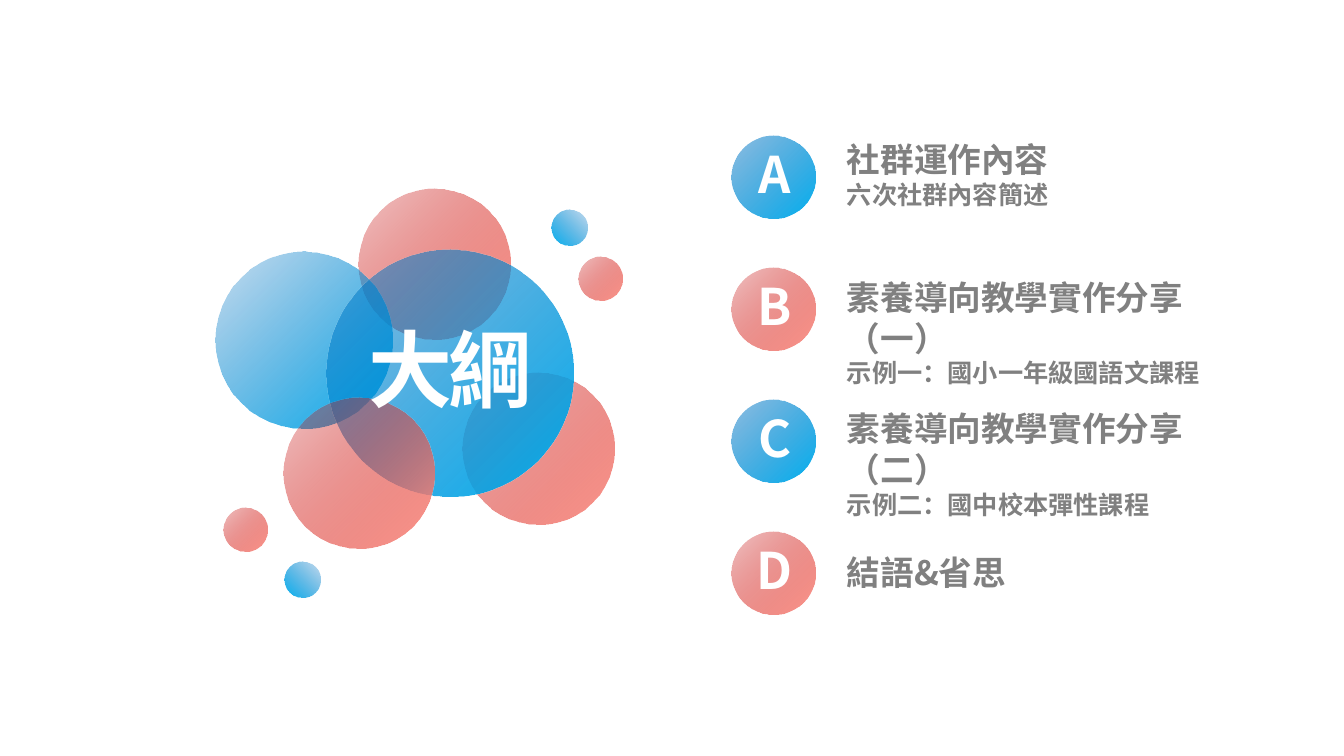
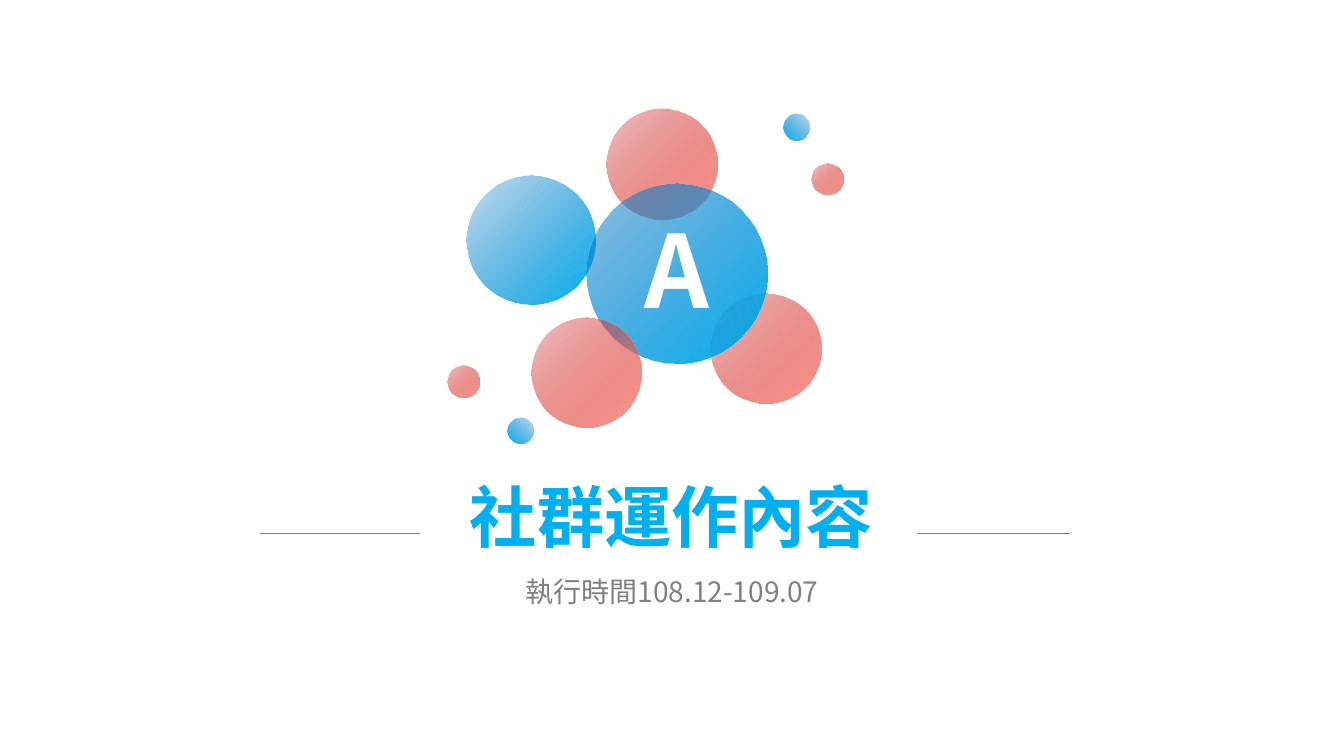
from pptx import Presentation
from pptx.util import Inches, Pt
from pptx.dml.color import RGBColor as Rgb
from pptx.enum.shapes import MSO_SHAPE as Kind, MSO_CONNECTOR as Link
from pptx.enum.text import PP_ALIGN as Align, MSO_AUTO_SIZE as Size
from pptx.oxml import parse_xml
from pptx.oxml.ns import nsdecls, qn
from lxml.etree import SubElement

HUE = {"blue": "00B0F0", "navy": "0070C0", "rose": "FE978C", "red": "C00000",
       "gray": "808080", "white": "FFFFFF"}
SANS, SLIM = "Noto Sans CJK SC", "Roboto Condensed"
TINT = {"sky": ("navy", "blue", 22, 45), "deep": ("navy", "blue", 44, 45),
        "drop": ("navy", "blue", 22, 135), "pink": ("red", "rose", 22, 45)}
ORBS = [("pink", 1.5), ("pink", 1.5), ("sky", 1.75), ("deep", 2.45), ("drop", 0.36),
        ("pink", 0.43), ("pink", 1.5), ("drop", 0.36), ("pink", 0.43)]
WIDE = [(1.42, 0), (2.45, 1.83), (0, 0.63), (1.1, 0.61), (3.33, 0.21),
        (3.6, 0.68), (0.67, 2.07), (0.68, 3.7), (0.08, 3.17)]
TIGHT = [(1.58, 0), (2.61, 1.83), (0.19, 0.66), (1.38, 0.74), (3.33, 0.05),
         (3.61, 0.54), (0.83, 2.07), (0.59, 3.06), (0, 2.55)]
TOPICS = [("A", "deep", 1.33, 3.45, 0.81, ["社群運作內容", "六次社群內容簡述"]),
          ("B", "pink", 2.7, 4.34, 0.81, ["素養導向教學實作分享（一）", "示例一：國小一年級國語文課程"]),
          ("C", "deep", 4, 4.34, 0.81, ["素養導向教學實作分享（二）", "示例二：國中校本彈性課程"]),
          ("D", "pink", 5.43, 4.34, 0.5, ["結語&省思"])]
HEAD = {"size": Pt(24), "bold": True, "name": SANS}
SUB = {"size": Pt(18), "bold": True, "name": SLIM}


def orb(page, x, y, size, tint):
    start, stop, alpha, angle = TINT[tint]
    disc = page.shapes.add_shape(Kind.OVAL, Inches(x), Inches(y), Inches(size), Inches(size))
    disc.shadow.inherit = False
    disc.line.fill.background()
    fill = parse_xml(
        f'<a:gradFill {nsdecls("a")} rotWithShape="1"><a:gsLst>'
        f'<a:gs pos="0"><a:srgbClr val="{HUE[start]}"><a:alpha val="{alpha * 1000}"/></a:srgbClr></a:gs>'
        f'<a:gs pos="100000"><a:srgbClr val="{HUE[stop]}"/></a:gs></a:gsLst>'
        f'<a:lin ang="{angle * 60000}" scaled="0"/></a:gradFill>')
    disc.element.spPr.find(qn("a:prstGeom")).addnext(fill)


def text(page, box, rows, hue, align=Align.CENTER, inset=0.1, gap=None):
    frame = page.shapes.add_textbox(*map(Inches, box)).text_frame
    frame.word_wrap = True
    frame.auto_size = Size.SHAPE_TO_FIT_TEXT
    frame.margin_left = Inches(inset)
    for i, (words, look) in enumerate(rows):
        para = frame.add_paragraph() if i else frame.paragraphs[0]
        para.alignment = align
        run = para.add_run()
        run.text = words
        for key, value in look.items():
            setattr(run.font, key, value)
        run.font.color.rgb = Rgb.from_string(HUE[hue])
        props = run._r.get_or_add_rPr()
        SubElement(props, qn("a:ea")).set("typeface", SANS)
        if gap:
            props.set("spc", str(gap))


def label(page, box, words, size, hue="white", bold=True, gap=None):
    look = {"size": Pt(size), "bold": bold, "name": SANS}
    text(page, box, [(words, look)], hue, gap=gap)


def cluster(page, left, top, spots, scale=1):
    for (tint, size), (x, y) in zip(ORBS, spots):
        orb(page, left + x, top + y, size * scale, tint)


def topics(page, left, top, step):
    for i, (mark, tint, y, width, height, rows) in enumerate(TOPICS):
        line = top + i * step
        orb(page, left, line, 0.83, tint)
        label(page, (left - 0.23, line + 0.03, 1.31, 0.71), mark, 36, gap=-300)
        text(page, (left + 1.14, y, width, height), list(zip(rows, (HEAD, SUB))),
             "gray", Align.LEFT, 0)


def rule(page, left, right, y):
    bar = page.shapes.add_connector(Link.STRAIGHT, Inches(left), Inches(y), Inches(right), Inches(y))
    bar.line.color.rgb = Rgb.from_string(HUE["gray"])
    bar.line.width = Pt(0.75)
    SubElement(bar.element.spPr, qn("a:effectLst"))


def outline(page):
    cluster(page, 2.14, 1.87, WIDE)
    label(page, (3.27, 3.1, 2.4, 1.11), "大綱", 60, gap=-300)
    topics(page, 7.26, 1.34, 1.31)


def section(page, mark, title, note):
    cluster(page, 4.44, 1.08, TIGHT, 0.73)
    label(page, (5.84, 2.01, 1.75, 1.31), mark, 72, gap=-300)
    label(page, (3.85, 4.67, 5.62, 0.91), title, 48, "blue")
    label(page, (1.43, 5.65, 10.47, 0.44), note, 20, "gray", False)
    for left, right in ((2.58, 4.17), (9.1, 10.61)):
        rule(page, left, right, 5.29)


def main():
    deck = Presentation()
    deck.slide_width, deck.slide_height = Inches(13.33), Inches(7.5)
    blank = deck.slide_layouts[6]
    outline(deck.slides.add_slide(blank))
    section(deck.slides.add_slide(blank), "A", "社群運作內容", "執行時間108.12-109.07")
    deck.save("out.pptx")


if __name__ == "__main__":
    main()
